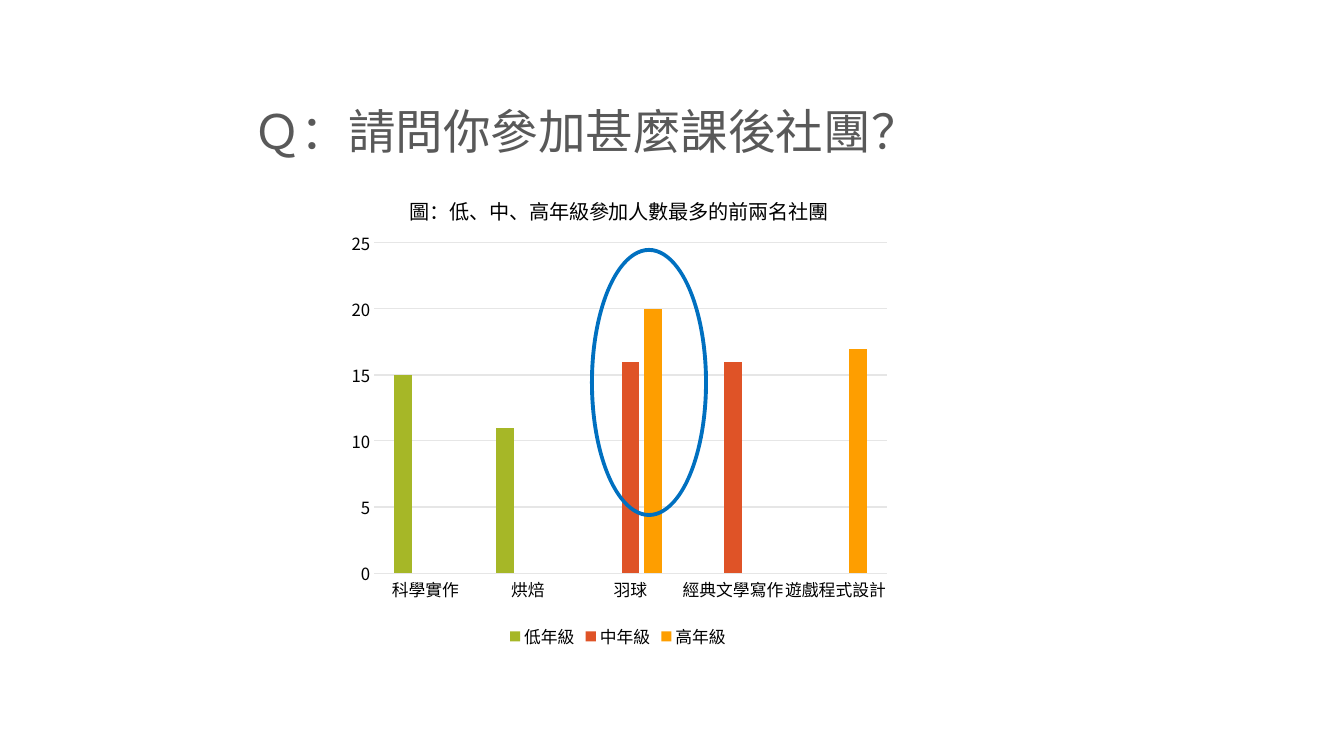
"""Build a slide with a clustered column chart of after-school clubs and a highlight ring."""
from lxml import etree
from pptx import Presentation
from pptx.chart.data import CategoryChartData
from pptx.dml.color import RGBColor
from pptx.enum.chart import XL_CHART_TYPE, XL_LEGEND_POSITION, XL_TICK_MARK
from pptx.enum.shapes import MSO_SHAPE
from pptx.enum.text import MSO_ANCHOR, PP_ALIGN
from pptx.oxml.ns import qn
from pptx.util import Emu, Pt

COLUMNS = XL_CHART_TYPE.COLUMN_CLUSTERED
BOTTOM = XL_LEGEND_POSITION.BOTTOM
NO_TICK = XL_TICK_MARK.NONE
DONUT = MSO_SHAPE.DONUT
ANCHOR_BOTTOM = MSO_ANCHOR.BOTTOM
LEFT = PP_ALIGN.LEFT
FONT = "Noto Sans CJK SC"
SCALE = 914400 / 100.8
CHART_BOX = (339, 166, 558, 487)
GRID = "E6E6E6"


def write(frame, text, size, color, align=None, spacing=None):
    frame.text = text
    para = frame.paragraphs[0]
    para.alignment = align
    para.line_spacing = spacing
    font = para.runs[0].font
    font.size, font.bold, font.name = Pt(size), False, FONT
    font.color.rgb = RGBColor.from_string(color)
    latin = font._element.find(qn("a:latin"))
    etree.SubElement(latin.getparent(), qn("a:ea"), typeface=FONT)


def place(parent, **fractions):
    layout = parent.find(qn("c:layout"))
    if layout is None:
        layout = etree.Element(qn("c:layout"))
        parent.insert(0, layout)
    manual = etree.SubElement(layout, qn("c:manualLayout"))
    for tag, value in fractions.items():
        etree.SubElement(manual, qn(f"c:{tag}"), val=str(value))


deck = Presentation()
deck.slide_width, deck.slide_height = Emu(12192000), Emu(6858000)
page = deck.slides.add_slide(deck.slide_layouts[5])

title = page.shapes.title
title.left, title.top, title.width, title.height = [Emu(round(n * SCALE)) for n in (243, 33, 1033, 132)]
title.text_frame.vertical_anchor = ANCHOR_BOTTOM
write(title.text_frame, "Ｑ：請問你參加甚麼課後社團？", 34, "595959", align=LEFT, spacing=0.9)

grades = [
    ("低年級", "A6B727", (15, 11, None, None, None)),
    ("中年級", "DF5327", (None, None, 16, 16, None)),
    ("高年級", "FE9E00", (None, None, 20, None, 17)),
]
data = CategoryChartData()
data.categories = ["科學實作", "烘焙", "羽球", "經典文學寫作", "遊戲程式設計"]
for name, color, counts in grades:
    data.add_series(name, counts)
chart = page.shapes.add_chart(COLUMNS, *[Emu(round(n * SCALE)) for n in CHART_BOX], data).chart
chart.font.size, chart.font.name = Pt(12), FONT
chart.font.color.rgb = RGBColor.from_string("000000")
chart_latin = chart.font._element.find(qn("a:latin"))
etree.SubElement(chart_latin.getparent(), qn("a:ea"), typeface=FONT)

write(chart.chart_title.text_frame, "圖：低、中、高年級參加人數最多的前兩名社團", 14.4, "000000")
chart.has_legend = True
chart.legend.position = BOTTOM
chart.legend.include_in_layout = False

plot = chart.plots[0]
plot.gap_width, plot.overlap, plot.vary_by_categories = 219, -27, False
for series, (name, color, counts) in zip(plot.series, grades):
    series.format.fill.solid()
    series.format.fill.fore_color.rgb = RGBColor.from_string(color)

clubs, members = chart.category_axis, chart.value_axis
members.minimum_scale, members.maximum_scale, members.major_unit = 0, 25, 5
for axis in (clubs, members):
    axis.major_tick_mark = axis.minor_tick_mark = NO_TICK
members.format.line.fill.background()
for line in (clubs.format.line, members.major_gridlines.format.line):
    line.color.rgb = RGBColor.from_string(GRID)
    line.width = Pt(0.75)

place(chart.chart_title._element, xMode="edge", yMode="edge", x=0.12, y=0.05)
place(chart.element.find(".//" + qn("c:plotArea")), layoutTarget="inner", xMode="edge",
      yMode="edge", x=0.063, y=0.158, w=0.919, h=0.678)

ring = page.shapes.add_shape(DONUT, *[Emu(round(n * SCALE)) for n in (590, 248, 118, 269)])
ring.adjustments[0] = 0.033
ring.shadow.inherit = False
ring.fill.solid()
ring.fill.fore_color.rgb = RGBColor.from_string("0070C0")
ring.line.fill.background()

deck.save("out.pptx")
